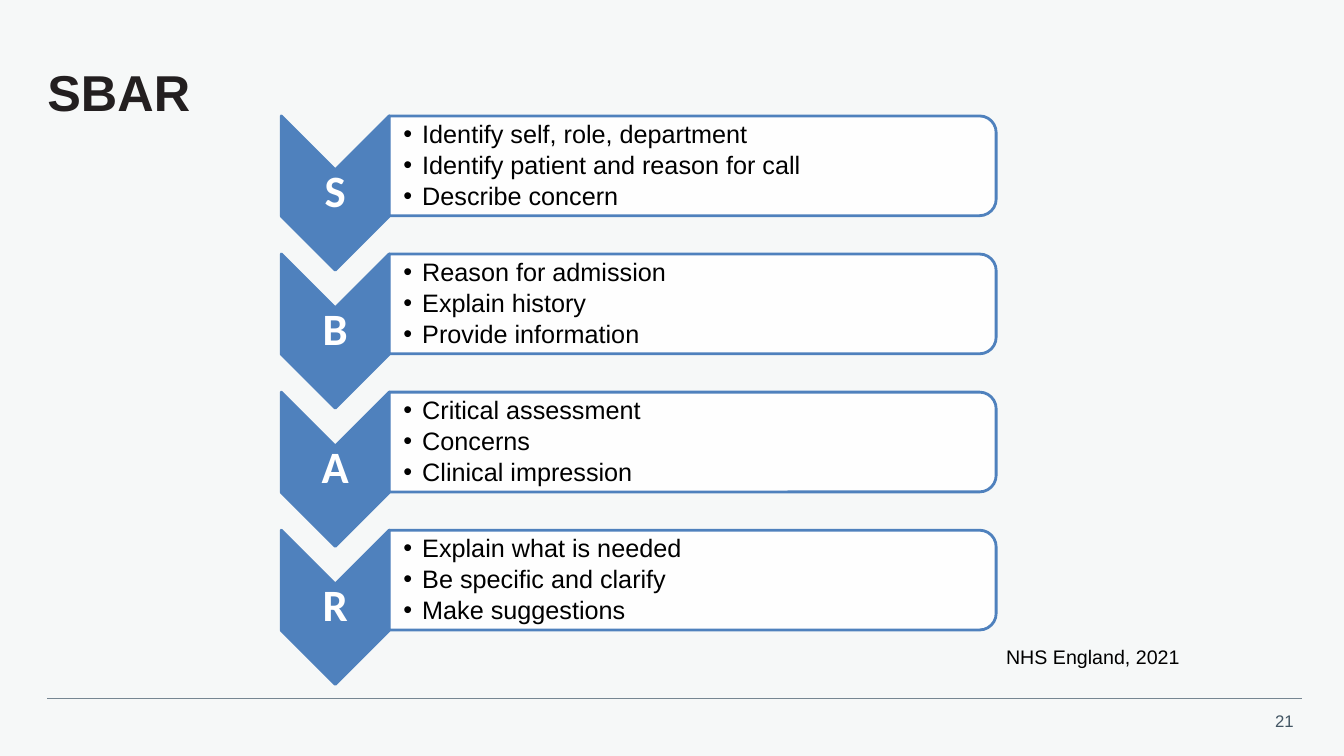
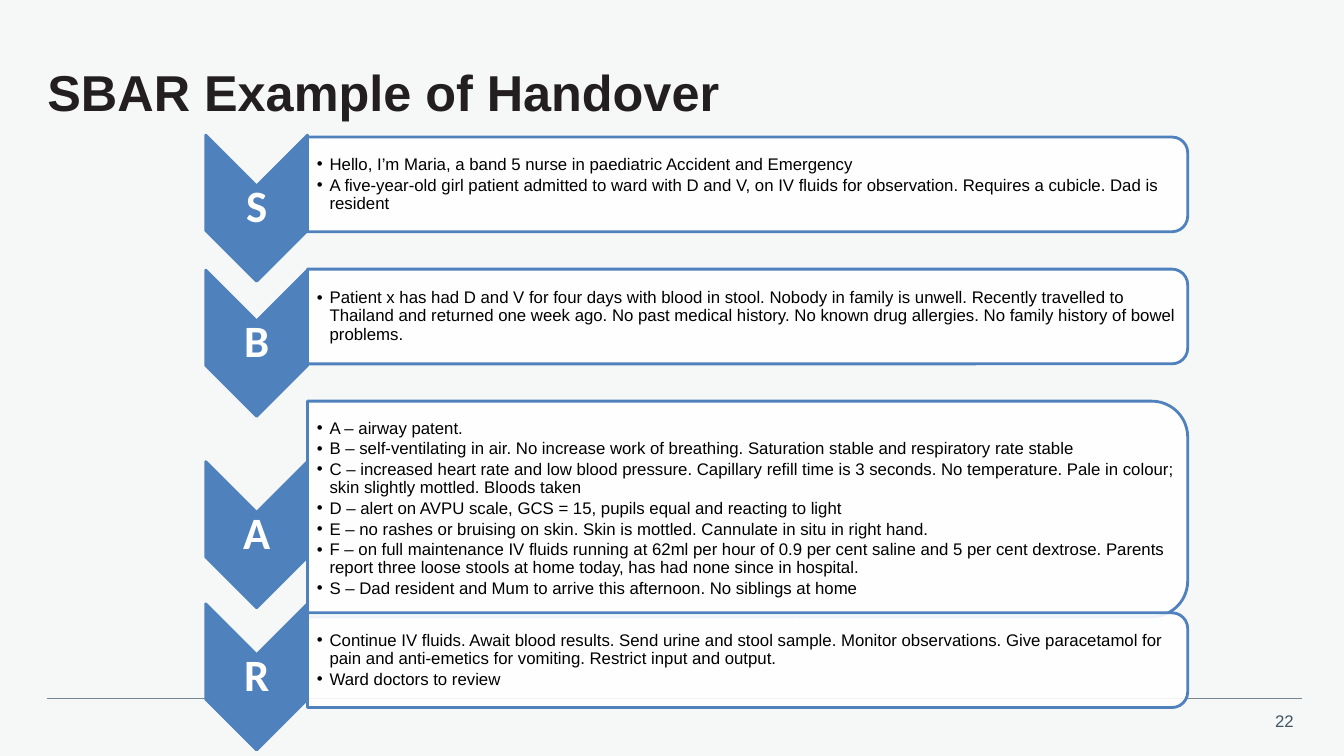
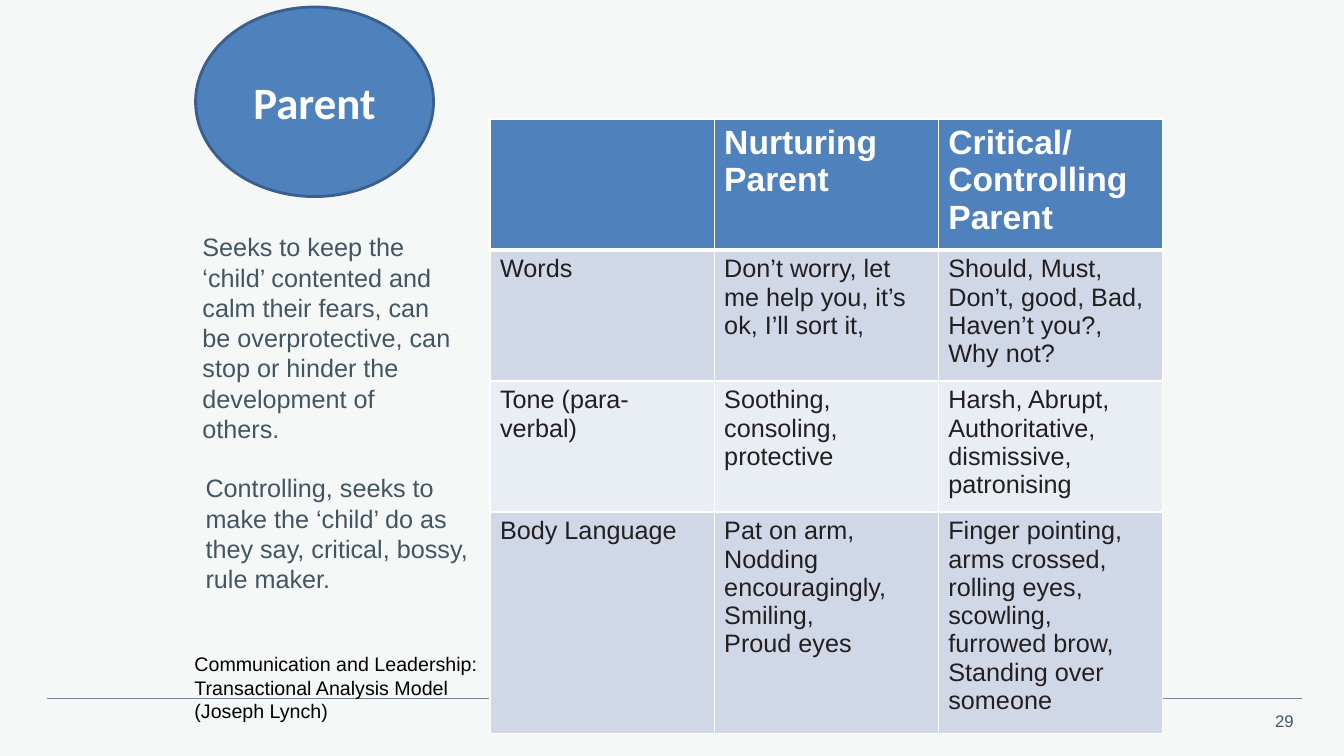
from lxml.etree import SubElement
from pptx import Presentation
from pptx.dml.color import RGBColor
from pptx.enum.shapes import MSO_CONNECTOR, MSO_SHAPE
from pptx.enum.text import MSO_ANCHOR, MSO_AUTO_SIZE, PP_ALIGN
from pptx.oxml.ns import qn
from pptx.util import Inches, Pt

BACK, INK, SLATE, RULE = "F6F8F8", "231F20", "425563", "768692"
BLUE, DARK_BLUE, WHITE, BLACK = "4F81BD", "3A5F8C", "FFFFFF", "000000"
BANDS = ["D0D8E8", "E9EDF4"]
TITLE_ONLY, BLANK = 5, 6

OUTLINE = [
    ("S", ["Identify self, role, department",
           "Identify patient and reason for call",
           "Describe concern"]),
    ("B", ["Reason for admission", "Explain history", "Provide information"]),
    ("A", ["Critical assessment", "Concerns", "Clinical impression"]),
    ("R", ["Explain what is needed", "Be specific and clarify",
           "Make suggestions"]),
]

HANDOVER = [
    ("S", 1.34, 1.36, 0.94, [
        "Hello, I’m Maria, a band 5 nurse in paediatric Accident and Emergency",
        "A five-year-old girl patient admitted to ward with D and V, on IV "
        "fluids for observation. Requires a cubicle. Dad is resident"]),
    ("B", 2.68, 2.67, 0.94, [
        "Patient x has had D and V for four days with blood in stool. Nobody "
        "in family is unwell. Recently travelled to Thailand and returned one "
        "week ago. No past medical history. No known drug allergies. No "
        "family history of bowel problems."]),
    ("A", 4.58, 3.98, 2.14, [
        "A – airway patent.",
        "B – self-ventilating in air. No increase work of breathing. "
        "Saturation stable and respiratory rate stable",
        "C – increased heart rate and low blood pressure. Capillary refill "
        "time is 3 seconds. No temperature. Pale in colour; skin slightly "
        "mottled. Bloods taken",
        "D – alert on AVPU scale, GCS = 15, pupils equal and reacting to light",
        "E – no rashes or bruising on skin. Skin is mottled. Cannulate in "
        "situ in right hand.",
        "F – on full maintenance IV fluids running at 62ml per hour of 0.9 "
        "per cent saline and 5 per cent dextrose. Parents report three loose "
        "stools at home today, has had none since in hospital.",
        "S – Dad resident and Mum to arrive this afternoon. No siblings at "
        "home"]),
    ("R", 5.99, 6.08, 0.94, [
        "Continue IV fluids. Await blood results. Send urine and stool "
        "sample. Monitor observations. Give paracetamol for pain and "
        "anti-emetics for vomiting. Restrict input and output.",
        "Ward doctors to review"]),
]

PARENT_ROWS = [
    [[], ["Nurturing Parent"], ["Critical/ Controlling Parent"]],
    [["Words"], ["Don’t worry, let me help you, it’s ok, I’ll sort it,"],
     ["Should, Must, Don’t, good, Bad, Haven’t you?, Why not?"]],
    [["Tone (para-verbal)"], ["Soothing, consoling, protective"],
     ["Harsh, Abrupt, Authoritative, dismissive, patronising"]],
    [["Body Language"],
     ["Pat on arm,", "Nodding encouragingly,", "Smiling,", "Proud eyes"],
     ["Finger pointing, arms crossed, rolling eyes, scowling,",
      "furrowed brow,", "Standing over someone"]],
]


def rgb(color):
    return RGBColor.from_string(color)


def place(sp, box):
    sp.left, sp.top, sp.width, sp.height = [Inches(v) for v in box]


def write(tf, lines, size, color, font="Arial", bold=False,
          align=PP_ALIGN.LEFT, spacing=None, indent=None):
    for i, line in enumerate(lines):
        p = tf.paragraphs[0] if i == 0 else tf.add_paragraph()
        p.alignment = align
        if spacing:
            p.line_spacing = spacing
        if indent:
            add_bullet(p, indent)
        r = p.add_run()
        r.text = line
        r.font.name, r.font.size, r.font.bold = font, Pt(size), bold
        r.font.color.rgb = rgb(color)


def add_bullet(p, indent):
    pPr = p._p.get_or_add_pPr()
    pPr.set("marL", str(Inches(indent)))
    pPr.set("indent", str(-Inches(indent)))
    after = SubElement(pPr, qn("a:spcAft"))
    SubElement(after, qn("a:spcPct")).set("val", "15000")
    SubElement(pPr, qn("a:buFont")).set("typeface", "Arial")
    SubElement(pPr, qn("a:buChar")).set("char", "•")


def set_frame(tf, margins, anchor):
    tf.word_wrap = True
    tf.auto_size = MSO_AUTO_SIZE.NONE
    tf.vertical_anchor = anchor
    (tf.margin_left, tf.margin_top,
     tf.margin_right, tf.margin_bottom) = [Inches(m) for m in margins]


def add_text(s, box, lines, size, color, margins=(0.1, 0.05, 0.1, 0.05),
             anchor=MSO_ANCHOR.TOP, **style):
    tf = s.shapes.add_textbox(*[Inches(v) for v in box]).text_frame
    set_frame(tf, margins, anchor)
    write(tf, lines, size, color, **style)


def add_preset(s, preset, box, fill, line):
    sp = s.shapes.add_shape(preset, *[Inches(v) for v in box])
    sp.shadow.inherit = False
    sp.fill.solid()
    sp.fill.fore_color.rgb = rgb(fill)
    sp.line.color.rgb = rgb(line)
    sp.line.width = Pt(2)
    return sp


def add_turned(s, preset, box, fill):
    x, y, w, h = box
    turned = (x + (w - h) / 2, y + (h - w) / 2, h, w)
    sp = add_preset(s, preset, turned, fill, BLUE)
    sp.rotation = 90
    return sp


def add_base(prs, layout, number, title=None):
    s = prs.slides.add_slide(prs.slide_layouts[layout])
    rule = s.shapes.add_connector(MSO_CONNECTOR.STRAIGHT, Inches(0.47),
                                  Inches(6.93), Inches(12.91), Inches(6.93))
    rule.line.color.rgb = rgb(RULE)
    rule.line.width = Pt(0.5)
    SubElement(rule._element.spPr, qn("a:effectLst"))
    add_text(s, (12.33, 7, 0.6, 0.3), [number], 12, SLATE,
             align=PP_ALIGN.RIGHT)
    if title:
        place(s.shapes.title, (0.47, 0.47, 12.47, 0.95))
        tf = s.shapes.title.text_frame
        set_frame(tf, (0, 0, 0, 0), MSO_ANCHOR.MIDDLE)
        write(tf, [title], 36, INK, bold=True, spacing=0.9)
    return s


def add_chevron(s, box, letter):
    add_turned(s, MSO_SHAPE.CHEVRON, box, BLUE)
    x, y, w, h = box
    add_text(s, (x, y + w / 2, w, h - w), [letter], 32, WHITE,
             margins=[0.02] * 4, anchor=MSO_ANCHOR.MIDDLE, font="Calibri",
             bold=True, align=PP_ALIGN.CENTER, spacing=0.9)


def add_panel(s, box, lines, size):
    sp = add_turned(s, MSO_SHAPE.ROUND_2_SAME_RECTANGLE, box, WHITE)
    color = sp._element.spPr.find(qn("a:solidFill")).find(qn("a:srgbClr"))
    SubElement(color, qn("a:alpha")).set("val", "90000")
    x, y, w, h = box
    inset = 0.05 * h
    add_text(s, (x, y + inset, w - inset, h - 2 * inset), lines, size, BLACK,
             margins=(size / 128, 0.01, 0.01, 0.01),
             anchor=MSO_ANCHOR.MIDDLE, spacing=0.9, indent=size / 96)


def outline_slide(prs):
    s = add_base(prs, TITLE_ONLY, "21", "SBAR")
    for i, (letter, lines) in enumerate(OUTLINE):
        top = 1.15 + 1.37 * i
        add_chevron(s, (2.79, top, 1.07, 1.53), letter)
        add_panel(s, (3.86, top, 6.02, 0.99), lines, 18)
    add_text(s, (9.88, 6.35, 2.2, 0.34), ["NHS England, 2021"], 14, BLACK)


def handover_slide(prs):
    s = add_base(prs, TITLE_ONLY, "22", "SBAR Example of Handover")
    for letter, chevron_top, panel_top, height, lines in HANDOVER:
        add_chevron(s, (2.04, chevron_top, 1.01, 1.45), letter)
        add_panel(s, (3.05, panel_top, 8.73, height), lines, 12)


def add_borders(cell, top, bottom):
    tcPr = cell._tc.get_or_add_tcPr()
    for side, width in (("L", 1), ("R", 1), ("T", top), ("B", bottom)):
        ln = SubElement(tcPr, qn("a:ln" + side), w=str(Pt(width)))
        fill = SubElement(ln, qn("a:solidFill"))
        SubElement(fill, qn("a:srgbClr")).set("val", WHITE)


def add_parent_table(s, box, heights):
    shape = s.shapes.add_table(len(PARENT_ROWS), len(PARENT_ROWS[0]),
                               *[Inches(v) for v in box])
    table = shape.table
    for i, row in enumerate(PARENT_ROWS):
        table.rows[i].height = Inches(heights[i])
        head = i == 0
        for j, lines in enumerate(row):
            cell = table.cell(i, j)
            add_borders(cell, 3 if i == 1 else 1, 3 if head else 1)
            cell.fill.solid()
            cell.fill.fore_color.rgb = rgb(BLUE if head else BANDS[(i - 1) % 2])
            write(cell.text_frame, lines, 24 if head else 18,
                  WHITE if head else INK, bold=head)


def parent_slide(prs):
    s = add_base(prs, BLANK, "29")
    add_text(s, (1.83, 6.42, 3.11, 0.8),
             ["Communication and Leadership: Transactional Analysis Model "
              "(Joseph Lynch)"], 14, BLACK)
    add_parent_table(s, (4.86, 1.18, 6.67, 6.1), (1.3, 1.3, 1.3, 2.2))
    add_text(s, (1.94, 4.64, 2.81, 1.31),
             ["Controlling, seeks to make the ‘child’ do as they say, "
              "critical, bossy, rule maker."], 18, SLATE)
    add_text(s, (1.91, 2.25, 2.66, 2.22),
             ["Seeks to keep the ‘child’ contented and calm their fears, can "
              "be overprotective, can stop or hinder the development of "
              "others."], 18, SLATE)
    sp = add_preset(s, MSO_SHAPE.OVAL, (1.94, 0.07, 2.36, 1.88), BLUE,
                    DARK_BLUE)
    sp.text_frame.vertical_anchor = MSO_ANCHOR.MIDDLE
    write(sp.text_frame, ["Parent"], 32, WHITE, font="Calibri", bold=True,
          align=PP_ALIGN.CENTER)


def main():
    prs = Presentation()
    prs.slide_width, prs.slide_height = Inches(13.33), Inches(7.5)
    fill = prs.slide_master.background.fill
    fill.solid()
    fill.fore_color.rgb = rgb(BACK)
    outline_slide(prs)
    handover_slide(prs)
    parent_slide(prs)
    prs.save("out.pptx")


if __name__ == "__main__":
    main()
